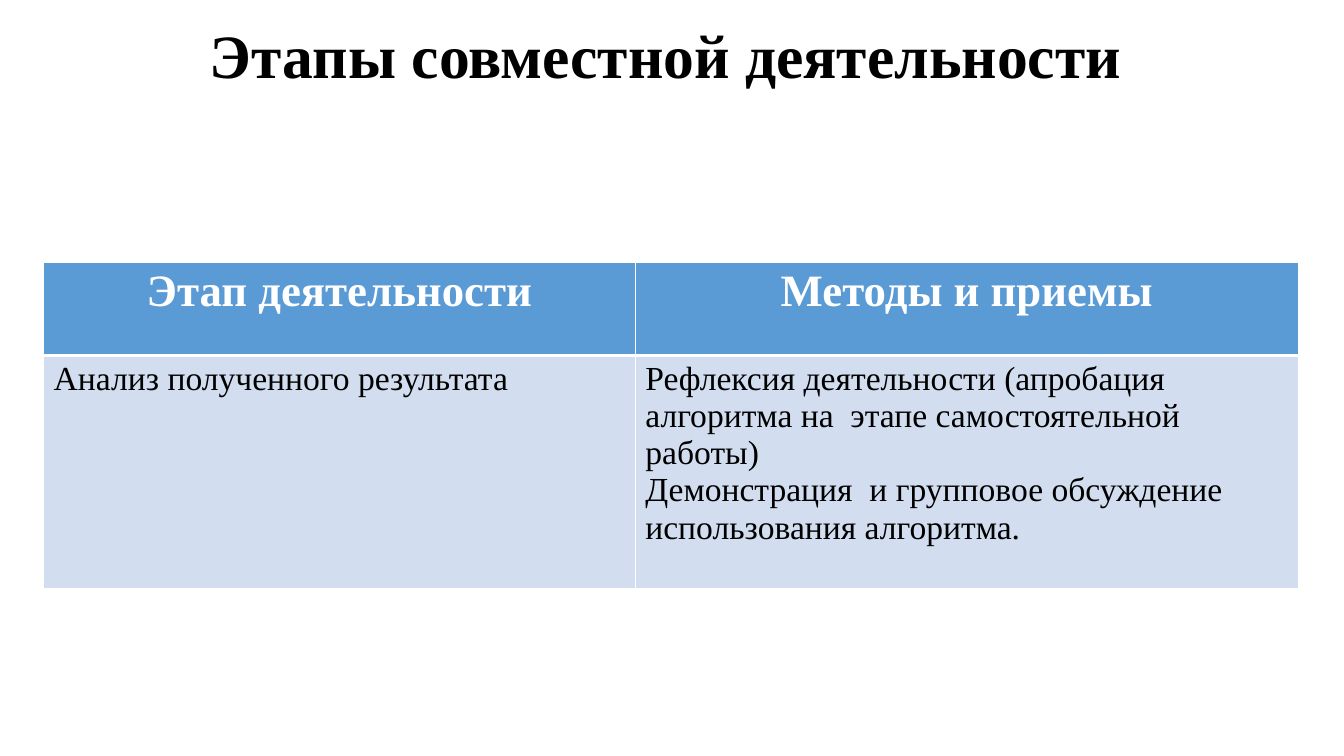
from lxml import etree
from pptx import Presentation
from pptx.dml.color import RGBColor
from pptx.enum.text import MSO_ANCHOR, PP_ALIGN
from pptx.oxml.ns import qn
from pptx.util import Cm, Pt

FONT = "Times New Roman"
COLORS = {"head": "5B9BD5", "body": "D2DEEF", "white": "FFFFFF", "black": "000000"}


def style(para, size, color, bold, align):
    para.alignment = align
    font = para.font
    font.name, font.size, font.bold = FONT, Pt(size), bold
    font.color.rgb = RGBColor.from_string(COLORS[color])


def border(cell, side, width):
    props = cell._tc.get_or_add_tcPr()
    line = etree.SubElement(props, qn(f"a:ln{side}"), w=str(Pt(width)))
    fill = etree.SubElement(line, qn("a:solidFill"))
    etree.SubElement(fill, qn("a:srgbClr"), val=COLORS["white"])


deck = Presentation()
deck.slide_width, deck.slide_height = Cm(33.87), Cm(19.05)
slide = deck.slides.add_slide(deck.slide_layouts[5])

# Title
title = slide.shapes.title
title.left, title.top, title.width, title.height = Cm(2.18), Cm(0), Cm(29.21), Cm(2.97)
frame = title.text_frame
frame.text = "Этапы совместной деятельности"
frame.vertical_anchor = MSO_ANCHOR.MIDDLE
frame.paragraphs[0].line_spacing = 0.9
style(frame.paragraphs[0], 44, "black", True, PP_ALIGN.CENTER)

# Table of stages and methods
rows = [
    ["Этап деятельности", "Методы и приемы"],
    [
        "Анализ полученного результата",
        "Рефлексия деятельности (апробация алгоритма на  этапе самостоятельной работы)\n"
        "Демонстрация  и групповое обсуждение использования алгоритма.",
    ],
]
widths, heights = [14.91, 16.71], [2.36, 5.86]
table = slide.shapes.add_table(
    2, 2, Cm(1.1), Cm(6.6), Cm(sum(widths)), Cm(sum(heights))
).table
for col, width in zip(table.columns, widths):
    col.width = Cm(width)
for row, height in zip(table.rows, heights):
    row.height = Cm(height)

# Cell text, borders and fills
for r, texts in enumerate(rows):
    head = r == 0
    for c, text in enumerate(texts):
        cell = table.cell(r, c)
        cell.text = text
        for para in cell.text_frame.paragraphs:
            if head:
                style(para, 32, "white", True, PP_ALIGN.CENTER)
            else:
                style(para, 24, "black", False, PP_ALIGN.LEFT)
        thick = "B" if head else "T"
        for side in "LRTB":
            border(cell, side, 3 if side == thick else 1)
        cell.fill.solid()
        cell.fill.fore_color.rgb = RGBColor.from_string(COLORS["head" if head else "body"])

deck.save("out.pptx")
